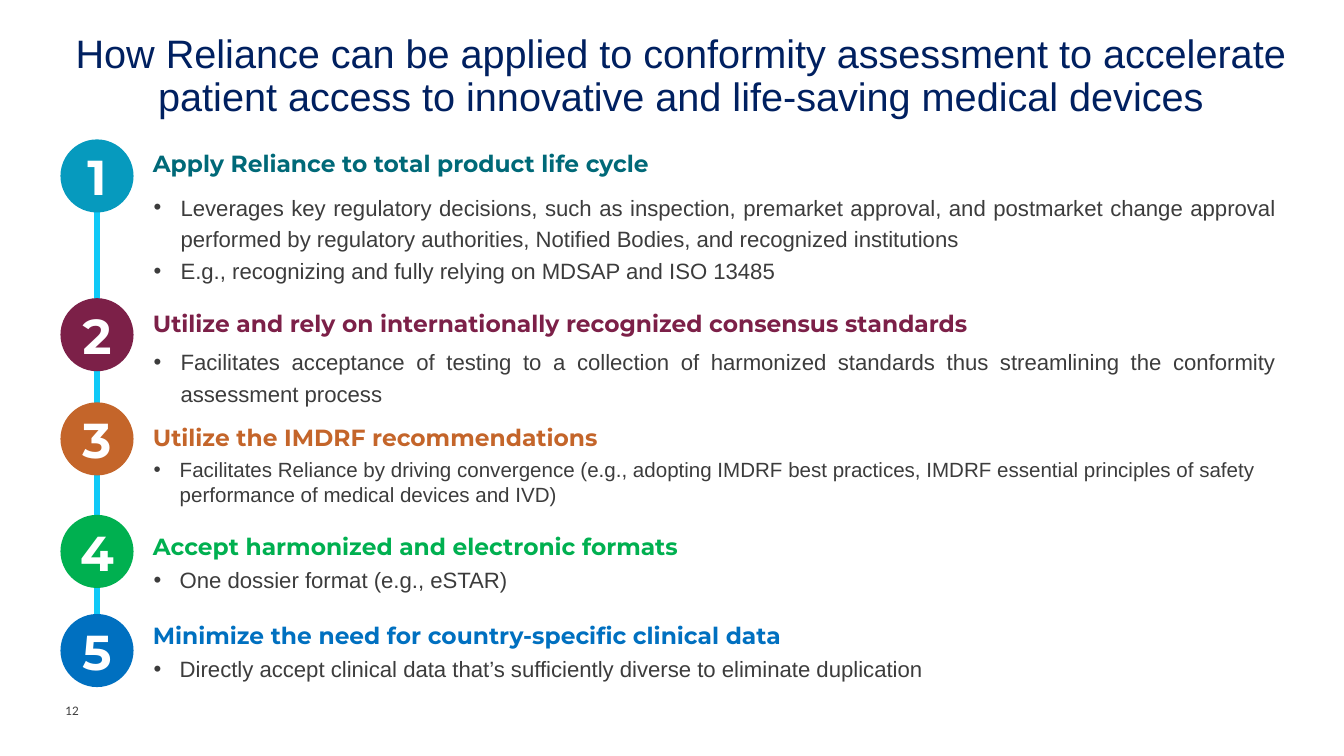
from dataclasses import dataclass

from lxml.etree import SubElement
from pptx import Presentation
from pptx.dml.color import RGBColor
from pptx.enum.shapes import MSO_CONNECTOR, MSO_SHAPE
from pptx.enum.text import MSO_ANCHOR, PP_ALIGN
from pptx.oxml.ns import qn
from pptx.util import Inches, Pt

NAVY = RGBColor(0x00, 0x20, 0x60)
TEXT_GREY = RGBColor(0x3C, 0x3C, 0x3C)
WHITE = RGBColor(0xFF, 0xFF, 0xFF)
CYAN = RGBColor(0x0F, 0xC9, 0xF7)
TEAL = RGBColor(0x06, 0x9A, 0xBE)
DARK_TEAL = RGBColor(0x00, 0x69, 0x78)
PLUM = RGBColor(0x7C, 0x20, 0x48)
ORANGE = RGBColor(0xC4, 0x65, 0x2A)
GREEN = RGBColor(0x00, 0xB0, 0x50)
BLUE = RGBColor(0x00, 0x70, 0xC0)

CIRCLE_LEFT, CIRCLE_SIZE = 0.72, 0.87
HEADING_LEFT, TEXT_WIDTH = 1.82, 13.36


@dataclass
class Step:
    heading: str
    bullets: list
    circle_color: RGBColor
    heading_color: RGBColor
    circle_top: float
    heading_top: float
    bullets_top: float
    size: float = 19
    align: PP_ALIGN = PP_ALIGN.LEFT
    spacing: float = 1.0
    indent: float = 0.31


STEPS = [
    Step("Apply Reliance to total product life cycle",
         ["Leverages key regulatory decisions, such as inspection, premarket approval, "
          "and postmarket change approval performed by regulatory authorities, "
          "Notified Bodies, and recognized institutions",
          "E.g., recognizing and fully relying on MDSAP and ISO 13485"],
         TEAL, DARK_TEAL, 1.66, 1.78, 2.25,
         align=PP_ALIGN.JUSTIFY, spacing=1.19, indent=0.32),
    Step("Utilize and rely on internationally recognized consensus standards",
         ["Facilitates acceptance of testing to a collection of harmonized standards "
          "thus streamlining the conformity assessment process"],
         PLUM, PLUM, 3.55, 3.68, 4.09,
         align=PP_ALIGN.JUSTIFY, spacing=1.19, indent=0.32),
    Step("Utilize the IMDRF recommendations",
         ["Facilitates Reliance by driving convergence (e.g., adopting IMDRF best "
          "practices, IMDRF essential principles of safety performance of medical "
          "devices and IVD)"],
         ORANGE, ORANGE, 4.79, 5.04, 5.44, size=17.6),
    Step("Accept harmonized and electronic formats",
         ["One dossier format (e.g., eSTAR)"],
         GREEN, GREEN, 6.13, 6.34, 6.74),
    Step("Minimize the need for country-specific clinical data",
         ["Directly accept clinical data that’s sufficiently diverse to eliminate duplication"],
         BLUE, BLUE, 7.31, 7.4, 7.8),
]


def add_bullet(paragraph, indent):
    properties = paragraph._p.get_or_add_pPr()
    properties.set("marL", str(Inches(indent)))
    properties.set("indent", str(-Inches(indent)))
    SubElement(properties, qn("a:buFont")).set("typeface", "Arial")
    SubElement(properties, qn("a:buChar")).set("char", "•")


def write_text(frame, lines, *, size, color, font="Arial", bold=False,
               align=PP_ALIGN.LEFT, spacing=1.0, indent=None,
               anchor=MSO_ANCHOR.TOP, wrap=True):
    """Fill a frame with one paragraph per line; an indent makes them bullets."""
    frame.margin_left = frame.margin_right = 0
    frame.margin_top = frame.margin_bottom = 0
    frame.word_wrap = wrap
    frame.vertical_anchor = anchor
    for index, line in enumerate(lines):
        paragraph = frame.paragraphs[0] if index == 0 else frame.add_paragraph()
        paragraph.alignment = align
        paragraph.line_spacing = spacing
        if indent is not None:
            add_bullet(paragraph, indent)
        run = paragraph.add_run()
        run.text = line
        run.font.name = font
        run.font.size = Pt(size)
        run.font.bold = bold
        run.font.color.rgb = color


def add_text(slide, lines, left, top, width, height, **text_format):
    box = slide.shapes.add_textbox(Inches(left), Inches(top), Inches(width), Inches(height))
    write_text(box.text_frame, lines, **text_format)


def add_timeline(slide):
    center = Inches(CIRCLE_LEFT + CIRCLE_SIZE / 2)
    timeline = slide.shapes.add_connector(
        MSO_CONNECTOR.STRAIGHT, center, Inches(1.74), center, Inches(7.5))
    timeline.line.color.rgb = CYAN
    timeline.line.width = Pt(5)
    SubElement(timeline._element.spPr, qn("a:effectLst"))


def add_number_circle(slide, number, top, color):
    circle = slide.shapes.add_shape(
        MSO_SHAPE.OVAL, Inches(CIRCLE_LEFT), Inches(top),
        Inches(CIRCLE_SIZE), Inches(CIRCLE_SIZE))
    circle.shadow.inherit = False
    circle.fill.solid()
    circle.fill.fore_color.rgb = color
    circle.line.fill.background()
    write_text(circle.text_frame, [str(number)], size=42, color=WHITE,
               font="Montserrat", bold=True, align=PP_ALIGN.CENTER,
               anchor=MSO_ANCHOR.MIDDLE, wrap=False)


def add_step(slide, number, step):
    add_number_circle(slide, number, step.circle_top, step.circle_color)
    add_text(slide, [step.heading], HEADING_LEFT, step.heading_top, TEXT_WIDTH, 0.34,
             size=20, color=step.heading_color, font="Montserrat", bold=True)
    add_text(slide, step.bullets, HEADING_LEFT + 0.01, step.bullets_top, TEXT_WIDTH, 0.55,
             size=step.size, color=TEXT_GREY, align=step.align,
             spacing=step.spacing, indent=step.indent)


def main():
    presentation = Presentation()
    presentation.slide_width = Inches(16)
    presentation.slide_height = Inches(9)
    slide = presentation.slides.add_slide(presentation.slide_layouts[6])

    add_text(slide, ["How Reliance can be applied to conformity assessment to accelerate "
                     "patient access to innovative and life-saving medical devices"],
             0.72, 0.41, 14.78, 1.21,
             size=34, color=NAVY, align=PP_ALIGN.CENTER, spacing=0.9)
    add_text(slide, ["12"], 0.78, 8.38, 0.33, 0.17, size=10, color=TEXT_GREY,
             font="Lato", anchor=MSO_ANCHOR.BOTTOM)
    add_timeline(slide)
    for number, step in enumerate(STEPS, start=1):
        add_step(slide, number, step)

    presentation.save("out.pptx")


if __name__ == "__main__":
    main()
